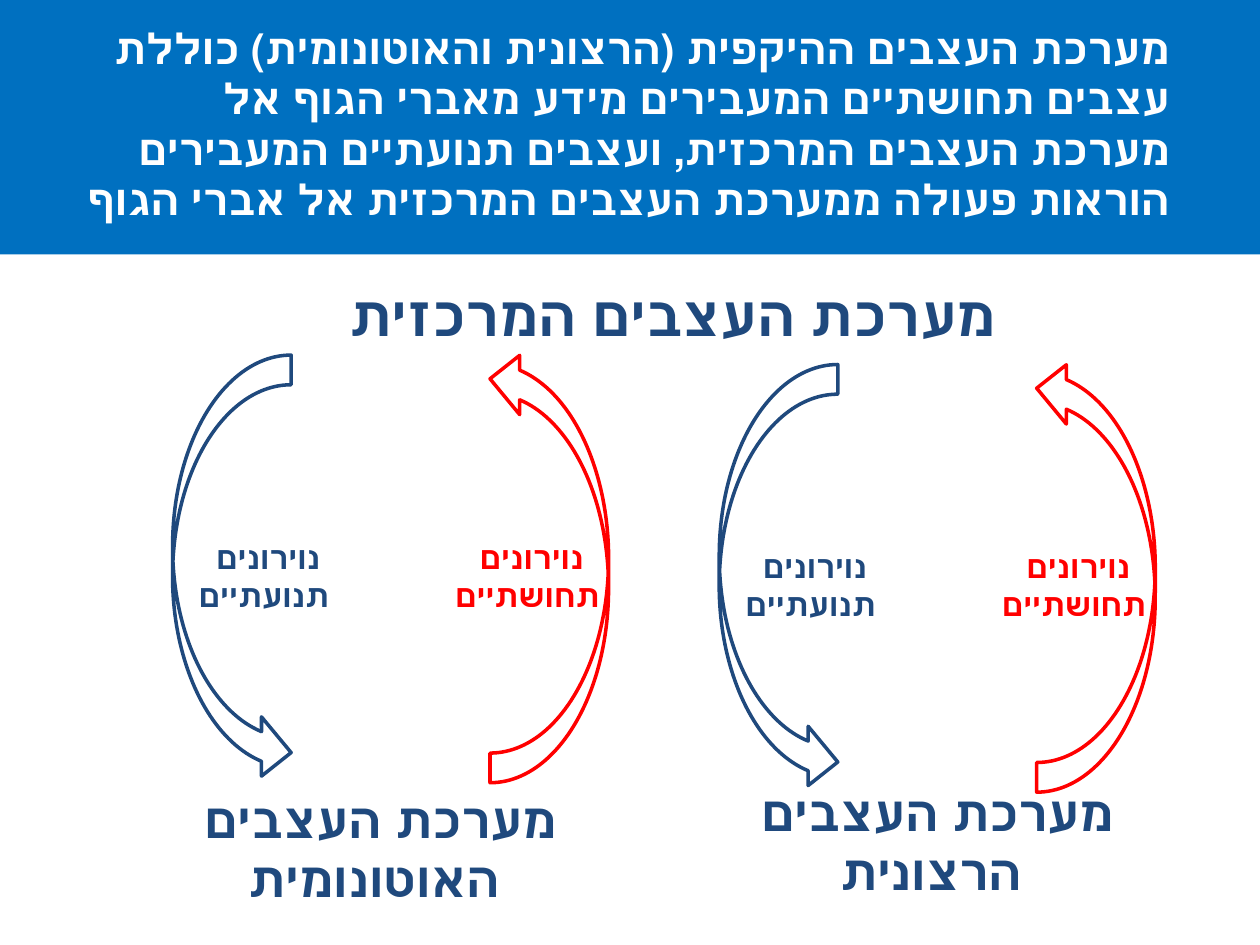
from dataclasses import dataclass

from pptx import Presentation
from pptx.dml.color import RGBColor
from pptx.enum.shapes import MSO_SHAPE as Preset
from pptx.enum.text import MSO_AUTO_SIZE as AutoSize, PP_ALIGN as Align
from pptx.slide import Slide
from pptx.util import Cm, Pt

BLUE = RGBColor(0x00, 0x70, 0xC0)
NAVY = RGBColor(0x1F, 0x49, 0x7D)
RED = RGBColor(0xFF, 0x00, 0x00)
WHITE = RGBColor(0xFF, 0xFF, 0xFF)
FONT = "Arial"


@dataclass(frozen=True)
class Area:
    """A rectangle in centimetres."""
    left: float
    top: float
    width: float
    height: float

    def shifted(self, right: float, down: float) -> "Area":
        return Area(self.left + right, self.top + down, self.width, self.height)

    def lengths(self) -> tuple[Cm, Cm, Cm, Cm]:
        return Cm(self.left), Cm(self.top), Cm(self.width), Cm(self.height)


@dataclass(frozen=True)
class Pathway:
    arrow: Area
    label: Area
    lines: tuple[str, ...]
    color: RGBColor
    upward: bool


@dataclass(frozen=True)
class Circuit:
    """A nerve system: its caption and the shift of its two pathways."""
    caption: Area
    lines: tuple[str, ...]
    right: float
    down: float


PATHWAYS = (
    Pathway(Area(3.48, 7.16, 2.39, 8.61), Area(2.46, 10.72, 5.72, 1.8),
            ("נוירונים ", "תנועתיים"), NAVY, upward=False),
    Pathway(Area(9.88, 7.04, 2.39, 8.74), Area(7.77, 10.72, 5.72, 1.8),
            ("נוירונים ", "תחושתיים"), RED, upward=True),
)
CIRCUITS = (
    Circuit(Area(13.64, 15.65, 10.26, 3.68),
            ("מערכת העצבים ", "הרצונית"), 11.02, 0.19),
    Circuit(Area(1.37, 15.8, 12.34, 3.84),
            ("מערכת העצבים ", "האוטונומית"), 0, 0),
)
SUMMARY = (
    "מערכת העצבים ההיקפית (הרצונית והאוטונומית) כוללת ",
    "עצבים תחושתיים המעבירים מידע מאברי הגוף אל ",
    "מערכת העצבים המרכזית, ועצבים תנועתיים המעבירים ",
    "הוראות פעולה ממערכת העצבים המרכזית אל אברי הגוף",
)


def add_hebrew(page: Slide, area: Area, lines: tuple[str, ...], size: int,
               color: RGBColor, align: Align = Align.CENTER) -> None:
    """Add a bold right-to-left text box with one paragraph per line."""
    frame = page.shapes.add_textbox(*area.lengths()).text_frame
    frame.word_wrap = True
    frame.auto_size = AutoSize.SHAPE_TO_FIT_TEXT
    frame.text = "\n".join(lines)
    for para in frame.paragraphs:
        para.alignment = align
        para._p.get_or_add_pPr().set("rtl", "1")
        para.font.name = FONT
        para.font.size = Pt(size)
        para.font.bold = True
        para.font.color.rgb = color


def add_banner(page: Slide) -> None:
    banner = page.shapes.add_shape(
        Preset.RECTANGLE, *Area(0, 0, 25.4, 5.13).lengths())
    banner.shadow.inherit = False
    banner.fill.solid()
    banner.fill.fore_color.rgb = BLUE
    banner.line.fill.background()


def add_pathway(page: Slide, pathway: Pathway, right: float, down: float) -> None:
    arrow = page.shapes.add_shape(
        Preset.CURVED_RIGHT_ARROW, *pathway.arrow.shifted(right, down).lengths())
    arrow.shadow.inherit = False
    arrow.fill.background()
    arrow.line.color.rgb = pathway.color
    arrow.line.width = Pt(2)
    if pathway.upward:
        for flip in ("flipH", "flipV"):
            arrow.element.spPr.xfrm.set(flip, "1")
    add_hebrew(page, pathway.label.shifted(right, down), pathway.lines, 18,
               pathway.color)


def main() -> None:
    deck = Presentation()
    deck.slide_width, deck.slide_height = Cm(25.4), Cm(19.05)
    page = deck.slides.add_slide(deck.slide_layouts[6])

    add_banner(page)
    for circuit in CIRCUITS:
        add_hebrew(page, circuit.caption, circuit.lines, 28, NAVY)
        for pathway in PATHWAYS:
            add_pathway(page, pathway, circuit.right, circuit.down)
    add_hebrew(page, Area(-2.31, 0.33, 26.14, 4.37), SUMMARY, 24, WHITE, Align.RIGHT)
    add_hebrew(page, Area(3.81, 5.54, 19.51, 3), ("מערכת העצבים המרכזית",), 32, NAVY)
    deck.save("out.pptx")


if __name__ == "__main__":
    main()
